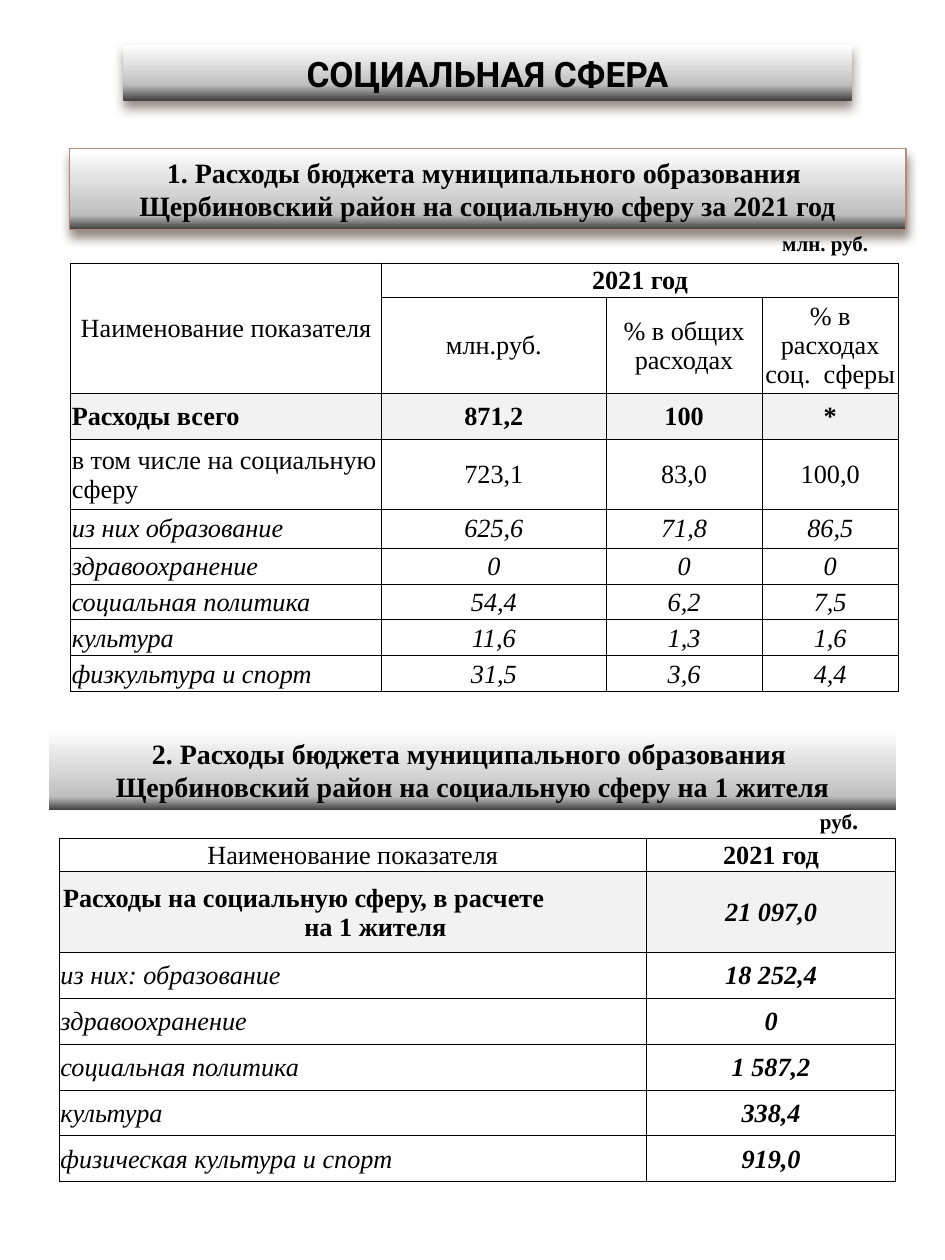
from copy import deepcopy
from dataclasses import dataclass

from lxml import etree
from pptx import Presentation
from pptx.dml.color import RGBColor
from pptx.enum.shapes import MSO_SHAPE
from pptx.enum.text import MSO_ANCHOR, MSO_AUTO_SIZE, PP_ALIGN
from pptx.oxml.ns import qn
from pptx.util import Inches, Pt

RECT = MSO_SHAPE.RECTANGLE
MIDDLE = MSO_ANCHOR.MIDDLE
GROW = MSO_AUTO_SIZE.SHAPE_TO_FIT_TEXT
LEFT, CENTER = PP_ALIGN.LEFT, PP_ALIGN.CENTER

WIDTH, HEIGHT = Inches(7.5), Inches(10)
COLS, ROWS = 750, 1000


@dataclass(frozen=True)
class Theme:
    ink: str = "000000"
    dark: str = "404040"
    gray: str = "BFBFBF"
    white: str = "FFFFFF"
    band: str = "F2F2F2"
    edge: str = "B58B80"
    shade: str = "4E3B30"
    serif: str = "Times New Roman"
    sans: str = "Roboto"
    title: int = 20
    head: int = 16
    body: int = 15
    dot: int = 14
    note: int = 12


THEME = Theme()


def across(n):
    return int(WIDTH * n / COLS)


def down(n):
    return int(HEIGHT * n / ROWS)


def place(left, top, width, height):
    return across(left), down(top), across(width), down(height)


def color(code):
    return RGBColor.from_string(code)


def style(para, size, look="", face=THEME.serif):
    for run in para.runs:
        font = run.font
        font.name, font.size = face, Pt(size)
        font.bold, font.italic = "b" in look, "i" in look
        font.color.rgb = color(THEME.ink)


def blend(shape, middle):
    fill = shape.fill
    fill.gradient()
    fill.gradient_angle = 90
    stops = shape._element.spPr.find(".//" + qn("a:gsLst"))
    stops.append(deepcopy(stops[0]))
    marks = (0, THEME.dark), (middle, THEME.gray), (1, THEME.white)
    for stop, (spot, code) in zip(fill.gradient_stops, marks):
        stop.position = spot
        stop.color.rgb = color(code)


def shadow(shape):
    effects = shape._element.spPr.find(qn("a:effectLst"))
    outer = etree.SubElement(effects, qn("a:outerShdw"), blurRad=str(Pt(6)),
                             dist=str(Pt(4)), dir="5400000", rotWithShape="0")
    tint = etree.SubElement(outer, qn("a:srgbClr"), val=THEME.shade)
    etree.SubElement(tint, qn("a:alpha"), val="60000")


def banner(slide, box, text, middle, size=THEME.head, face=THEME.serif,
           edge=None, lift=True):
    shape = slide.shapes.add_shape(RECT, *place(*box))
    shape.shadow.inherit = False
    blend(shape, middle)
    if lift:
        shadow(shape)
    if edge:
        shape.line.color.rgb = color(edge)
        shape.line.width = Pt(0.79)
    else:
        shape.line.fill.background()
    frame = shape.text_frame
    frame.word_wrap, frame.auto_size = True, GROW
    para = frame.paragraphs[0]
    para.text = text
    para.alignment = CENTER
    style(para, size, "b", face)


def note(slide, box, text, tail=""):
    frame = slide.shapes.add_textbox(*place(*box)).text_frame
    frame.word_wrap, frame.auto_size = True, GROW
    para = frame.paragraphs[0]
    para.text = text
    if tail:
        para.add_run().text = tail
    style(para, THEME.note, "b")
    if tail:
        para.runs[-1].font.size = Pt(THEME.dot)


def border(cell):
    props = cell._tc.get_or_add_tcPr()
    for spot, side in enumerate(("lnL", "lnR", "lnT", "lnB")):
        line = etree.Element(qn("a:" + side), w=str(Pt(0.5)))
        fill = etree.SubElement(line, qn("a:solidFill"))
        etree.SubElement(fill, qn("a:srgbClr"), val=THEME.ink)
        props.insert(spot, line)


def write(cell, text, look, align, shaded):
    cell.vertical_anchor = MIDDLE
    cell.margin_left = cell.margin_top = cell.margin_right = Inches(0.01)
    cell.margin_bottom = 0
    if shaded:
        cell.fill.solid()
        cell.fill.fore_color.rgb = color(THEME.band)
    else:
        cell.fill.background()
    border(cell)
    cell.text_frame.text = text
    for para in cell.text_frame.paragraphs:
        para.alignment = align
        style(para, THEME.body, look)


def grid(slide, left, top, cols, rows, heads, bands):
    box = place(left, top, sum(cols), sum(rows))
    table = slide.shapes.add_table(len(rows), len(cols), *box).table
    table.first_row = table.horz_banding = False
    for col, size in zip(table.columns, cols):
        col.width = across(size)
    for row, size in zip(table.rows, rows):
        row.height = down(size)
    for r, (first, rest, texts) in enumerate(bands):
        for c, text in enumerate(texts):
            align = CENTER if c or r < heads else LEFT
            write(table.cell(r, c), text, rest if c else first, align,
                  r == heads)
    return table


def budget(slide):
    table = grid(slide, 56, 209, (247, 178, 124, 108),
                 (27, 76, 37, 55, 31) + (28.5,) * 4, 2, [
        ("", "b", ("Наименование показателя", "2021 год", "", "")),
        ("", "", ("", "млн.руб.", "% в общих расходах",
                  "% в расходах соц.  сферы")),
        ("b", "b", ("Расходы всего", "871,2", "100", "*")),
        ("", "", ("в том числе на социальную сферу",
                  "723,1", "83,0", "100,0")),
        ("i", "i", ("из них образование", "625,6", "71,8", "86,5")),
        ("i", "i", ("здравоохранение", "0", "0", "0")),
        ("i", "i", ("социальная политика", "54,4", "6,2", "7,5")),
        ("i", "i", ("культура", "11,6", "1,3", "1,6")),
        ("i", "i", ("физкультура и спорт", "31,5", "3,6", "4,4")),
    ])
    table.cell(0, 0).merge(table.cell(1, 0))
    table.cell(0, 1).merge(table.cell(0, 3))


def person(slide):
    table = grid(slide, 47, 665, (466, 198), (27, 64) + (36.4,) * 5, 1, [
        ("", "b", ("Наименование показателя", "2021 год")),
        ("b", "bi", ("Расходы на социальную сферу, в расчете\n"
                     "на 1 жителя", "21 097,0")),
        ("i", "bi", ("из них: образование", "18 252,4")),
        ("i", "bi", ("здравоохранение", "0")),
        ("i", "bi", ("социальная политика", "1 587,2")),
        ("i", "bi", ("культура", "338,4")),
        ("i", "bi", ("физическая культура и спорт", "919,0")),
    ])
    upper, lower = table.cell(1, 0).text_frame.paragraphs
    lower.alignment = CENTER
    for para, inset in (upper, 2), (lower, 36):
        para._p.get_or_add_pPr().set("marL", str(across(inset)))


def main():
    deck = Presentation()
    deck.slide_width, deck.slide_height = WIDTH, HEIGHT
    slide = deck.slides.add_slide(deck.slide_layouts[6])
    banner(slide, (98, 36, 578, 44), "СОЦИАЛЬНАЯ СФЕРА", 0.29,
           THEME.title, THEME.sans)
    banner(slide, (55, 118, 664, 64),
           "1. Расходы бюджета муниципального образования \v"
           "Щербиновский район на социальную сферу за 2021 год",
           0.18, edge=THEME.edge)
    budget(slide)
    banner(slide, (39, 579, 672, 64),
           "2. Расходы бюджета муниципального образования \v"
           "Щербиновский район на социальную сферу на 1 жителя",
           0.17, lift=False)
    note(slide, (611, 178, 102, 30), "млн. руб.")
    person(slide)
    note(slide, (641, 634, 70, 34), "руб", ".")
    deck.save("out.pptx")


if __name__ == "__main__":
    main()
